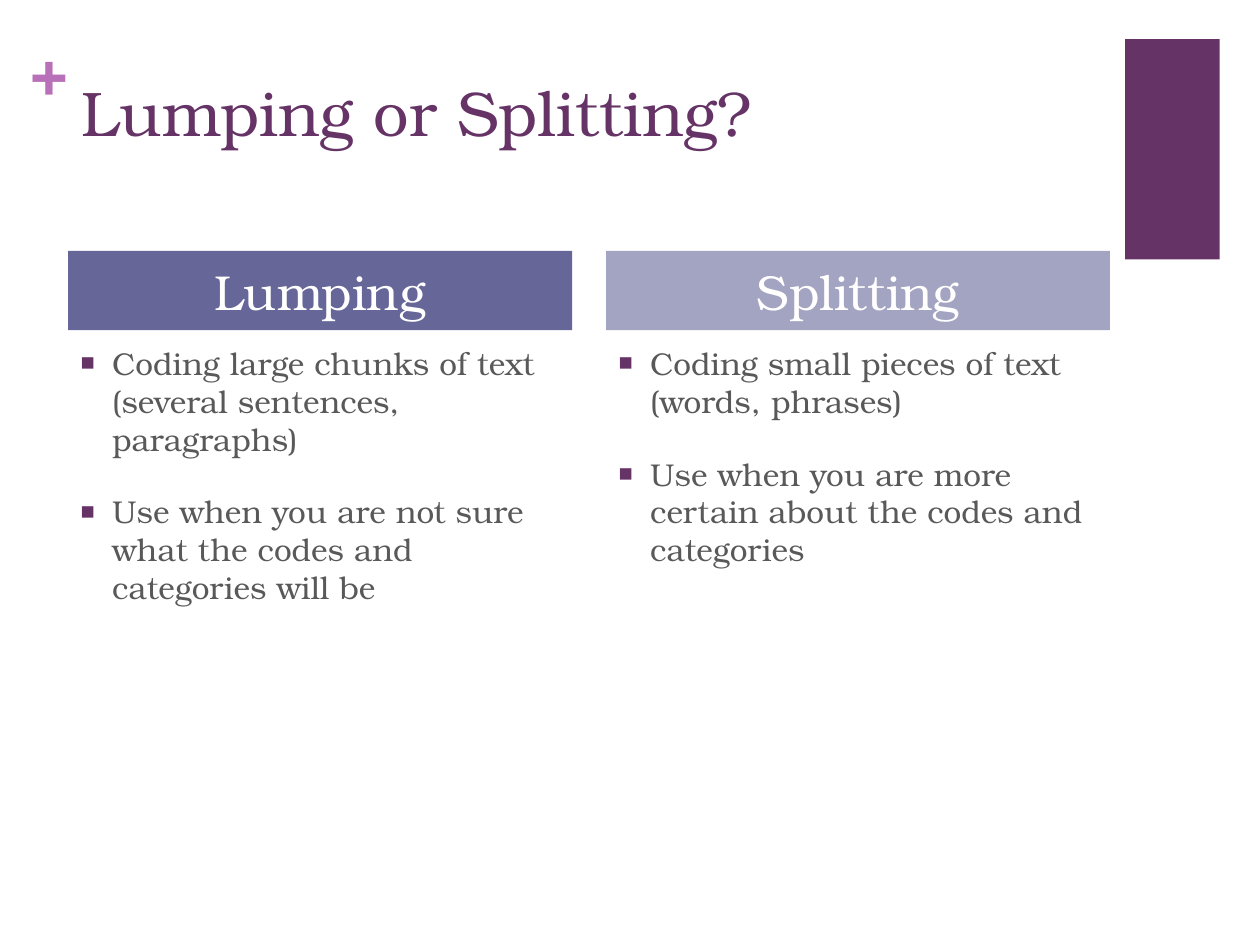
"""Build the slide that compares lumping with splitting."""
from dataclasses import dataclass

from lxml.etree import SubElement
from pptx import Presentation
from pptx.dml.color import RGBColor as Rgb
from pptx.enum.shapes import MSO_SHAPE as Preset
from pptx.enum.text import MSO_ANCHOR as Anchor, MSO_AUTO_SIZE as AutoSize, PP_ALIGN as Align
from pptx.oxml.ns import qn
from pptx.util import Inches, Pt


@dataclass(frozen=True)
class Theme:
    font: str = "TeX Gyre Bonum"
    accent: str = "663366"
    plus: str = "B870B8"
    body: str = "595959"
    light: str = "FFFFFF"
    headings: tuple = ("666699", "A3A3C2")
    title_size: int = 36
    heading_size: int = 28
    body_size: int = 18


THEME = Theme()
COLUMN_LEFT, COLUMN_STEP, COLUMN_WIDTH = 0.54, 4.27, 4
COLUMNS = (
    ("Lumping", (
        "Coding large chunks of text (several sentences, paragraphs)",
        "Use when you are not sure what the codes and categories will be",
    )),
    ("Splitting", (
        "Coding small pieces of text (words, phrases)",
        "Use when you are more certain about the codes and categories",
    )),
)


def place(shape, left, top, width, height):
    shape.left, shape.top = Inches(left), Inches(top)
    shape.width, shape.height = Inches(width), Inches(height)


def fill_solid(shape, color):
    shape.fill.solid()
    shape.fill.fore_color.rgb = Rgb.from_string(color)


def add_bullet(paragraph):
    properties = paragraph._p.get_or_add_pPr()
    properties.set("marL", str(Inches(0.25)))
    properties.set("indent", str(Inches(-0.25)))
    color = SubElement(properties, qn("a:buClr"))
    SubElement(color, qn("a:srgbClr"), val=THEME.accent)
    SubElement(properties, qn("a:buSzPct"), val="75000")
    SubElement(properties, qn("a:buFont"), typeface="Arial")
    SubElement(properties, qn("a:buChar"), char="■")


def write(shape, *lines, size, color, bold=False, align=Align.LEFT, anchor=Anchor.TOP,
          margins=(0.1, 0.05), wrap=True, bullets=False, gap=0):
    """Fill a shape with one formatted paragraph per line."""
    frame = shape.text_frame
    frame.auto_size = AutoSize.NONE
    frame.word_wrap = wrap
    frame.vertical_anchor = anchor
    frame.margin_left = frame.margin_right = Inches(margins[0])
    frame.margin_top = frame.margin_bottom = Inches(margins[1])
    for index, line in enumerate(lines):
        paragraph = frame.add_paragraph() if index else frame.paragraphs[0]
        if bullets:
            add_bullet(paragraph)
        paragraph.text = line
        paragraph.alignment = align
        paragraph.space_before = Pt(gap if index else 0)
        font = paragraph.font
        font.name, font.size, font.bold = THEME.font, Pt(size), bold
        font.color.rgb = Rgb.from_string(color)


def add_decoration(slide):
    block = slide.shapes.add_shape(
        Preset.RECTANGLE, Inches(8.93), Inches(0.31), Inches(0.75), Inches(1.75))
    block.shadow.inherit = False
    fill_solid(block, THEME.accent)
    block.line.fill.background()
    plus = slide.shapes.add_textbox(Inches(0.24), Inches(0.25), Inches(0.28), Inches(0.61))
    write(plus, "+", size=THEME.title_size, color=THEME.plus, bold=True,
          margins=(0, 0), wrap=False)


def fill_column(heading, points, left, title, lines, color):
    place(heading, left, 1.99, COLUMN_WIDTH, 0.63)
    fill_solid(heading, color)
    write(heading, title, size=THEME.heading_size, color=THEME.light,
          align=Align.CENTER, anchor=Anchor.MIDDLE, margins=(0.1, 0))
    place(points, left, 2.68, COLUMN_WIDTH, 4.02)
    write(points, *lines, size=THEME.body_size, color=THEME.body, bullets=True, gap=20)


def main():
    deck = Presentation()
    deck.slide_width, deck.slide_height = Inches(10), Inches(7.5)
    slide = deck.slides.add_slide(deck.slide_layouts.get_by_name("Comparison"))
    title, *areas = slide.placeholders
    add_decoration(slide)
    place(title, 0.55, 0.53, 8.26, 1.22)
    write(title, "Lumping or Splitting?", size=THEME.title_size, color=THEME.accent)
    pairs = zip(areas[::2], areas[1::2], COLUMNS, THEME.headings)
    for index, (heading, points, (name, lines), color) in enumerate(pairs):
        fill_column(heading, points, COLUMN_LEFT + index * COLUMN_STEP, name, lines, color)
    deck.save("out.pptx")


if __name__ == "__main__":
    main()
